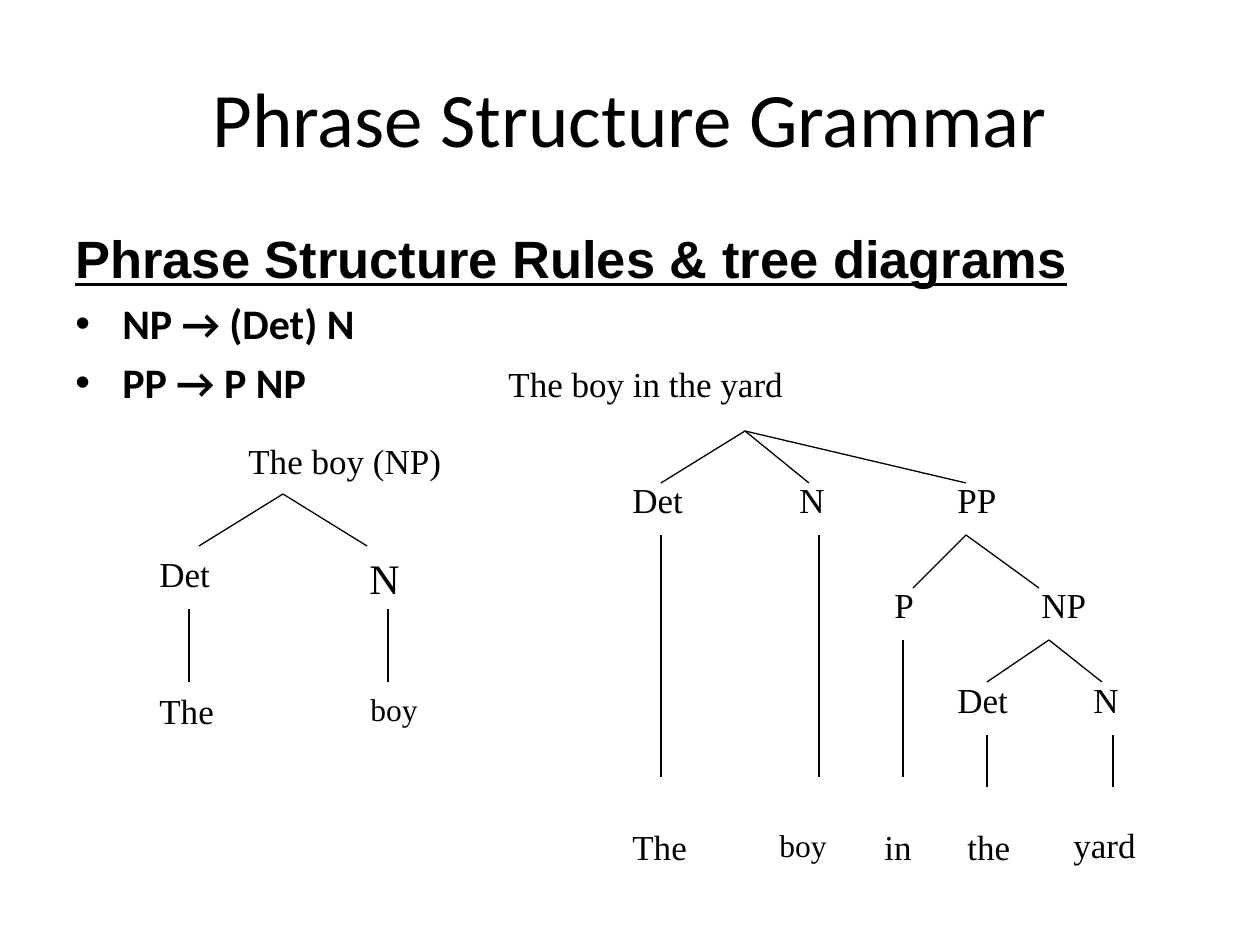
from lxml.etree import SubElement
from pptx import Presentation
from pptx.dml.color import RGBColor
from pptx.enum.shapes import MSO_CONNECTOR as Link
from pptx.enum.text import MSO_ANCHOR as Anchor, PP_ALIGN as Align
from pptx.oxml.ns import qn
from pptx.util import Emu, Pt

SCALE = 914400 / 126
INK = "000000"
SERIF = "Times New Roman"

LEFT = {
    "labels": [
        (89, 0, 230, "The boy (NP)", 20),
        (0, 113, 94, "Det", 20), (210, 113, 73, "N", 24),
        (0, 250, 94, "The", 20), (211, 251, 73, "boy", 18),
    ],
    "forks": [
        ((136, 61), [(52, 113), (220, 113)]),
        ((42, 176), [(42, 249)]),
        ((241, 176), [(241, 249)]),
    ],
}
RIGHT = {
    "labels": [
        (0, 0, 320, "The boy in the yard", 20),
        (124, 116, 94, "Det", 20), (291, 116, 73, "N", 20), (449, 116, 73, "PP", 20),
        (386, 221, 73, "P", 20), (533, 221, 105, "NP", 20),
        (449, 316, 94, "Det", 20), (585, 316, 53, "N", 20),
        (124, 463, 94, "The", 20), (271, 464, 73, "boy", 18), (376, 463, 73, "in", 20),
        (459, 463, 94, "the", 20), (565, 461, 116, "yard", 20),
    ],
    "forks": [
        ((249, 75), [(165, 127), (313, 127), (470, 127)]),
        ((470, 179), [(417, 232), (543, 232)]),
        ((553, 284), [(491, 326), (606, 326)]),
        ((165, 179), [(165, 421)]),
        ((323, 179), [(323, 421)]),
        ((407, 284), [(407, 421)]),
        ((491, 379), [(491, 431)]),
        ((617, 379), [(617, 431)]),
    ],
}


def px(n):
    """Turn pixels into EMU."""
    return Emu(round(n * SCALE))


def hue(code):
    """Turn a hex string into a colour."""
    return RGBColor.from_string(code)


def frame(slide, x, y, w, h, anchor=Anchor.TOP):
    """Add an empty wrapping text box and return its frame."""
    box = slide.shapes.add_textbox(px(x), px(y), px(w), px(h)).text_frame
    box.word_wrap = True
    box.vertical_anchor = anchor
    return box


def write(para, text, font=SERIF, size=20, bold=False, line=False,
          align=Align.LEFT, before=0, bullet=None):
    """Fill a paragraph with formatted text."""
    run = para.add_run()
    run.text = text
    face = run.font
    face.name, face.size, face.bold, face.underline = font, Pt(size), bold, line
    face.color.rgb = hue(INK)
    para.alignment = align
    props = para._p.get_or_add_pPr()
    if before:
        gap = SubElement(props, qn("a:spcBef"))
        SubElement(gap, qn("a:spcPct")).set("val", str(before * 1000))
    if bullet:
        props.set("marL", str(px(47)))
        props.set("indent", str(-px(47)))
        SubElement(props, qn("a:buFont")).set("typeface", "Arial")
        SubElement(props, qn("a:buChar")).set("char", bullet)


def title(slide, x, y, w, h):
    """Place the centred slide title."""
    box = frame(slide, x, y, w, h, Anchor.MIDDLE)
    write(box.paragraphs[0], "Phrase Structure Grammar", font="Calibri",
          size=44, align=Align.CENTER)


def rules(slide, x, y, w, h):
    """Place the heading and the bulleted grammar rules."""
    box = frame(slide, x, y, w, h)
    write(box.paragraphs[0], "Phrase Structure Rules & tree diagrams",
          font="Arial", size=30, bold=True, line=True, before=20)
    for rule in ("NP → (Det) N", "PP → P NP"):
        write(box.add_paragraph(), rule, font="Calibri", size=24, bold=True,
              before=20, bullet="•")


def branch(slide, x, y, start, end):
    """Draw one thin tree line."""
    (ax, ay), (bx, by) = start, end
    line = slide.shapes.add_connector(
        Link.STRAIGHT, px(x + ax), px(y + ay), px(x + bx), px(y + by))
    line.line.color.rgb = hue(INK)
    line.line.width = Pt(0.75)
    SubElement(line._element.spPr, qn("a:effectLst"))


def tree(slide, x, y, labels, forks):
    """Draw a syntax tree from its labels and forks."""
    for top, tips in forks:
        for tip in tips:
            branch(slide, x, y, top, tip)
    for dx, dy, w, text, size in labels:
        box = frame(slide, x + dx, y + dy, w, round(size * 2.75))
        write(box.paragraphs[0], text, size=size, before=50)


def main():
    """Build and save the slide."""
    deck = Presentation()
    deck.slide_width, deck.slide_height = px(1260), px(945)
    slide = deck.slides.add_slide(deck.slide_layouts[6])
    title(slide, 63, 38, 1134, 157)
    rules(slide, 63, 220, 1134, 624)
    tree(slide, 147, 433, **LEFT)
    tree(slide, 496, 356, **RIGHT)
    deck.save("out.pptx")


if __name__ == "__main__":
    main()
